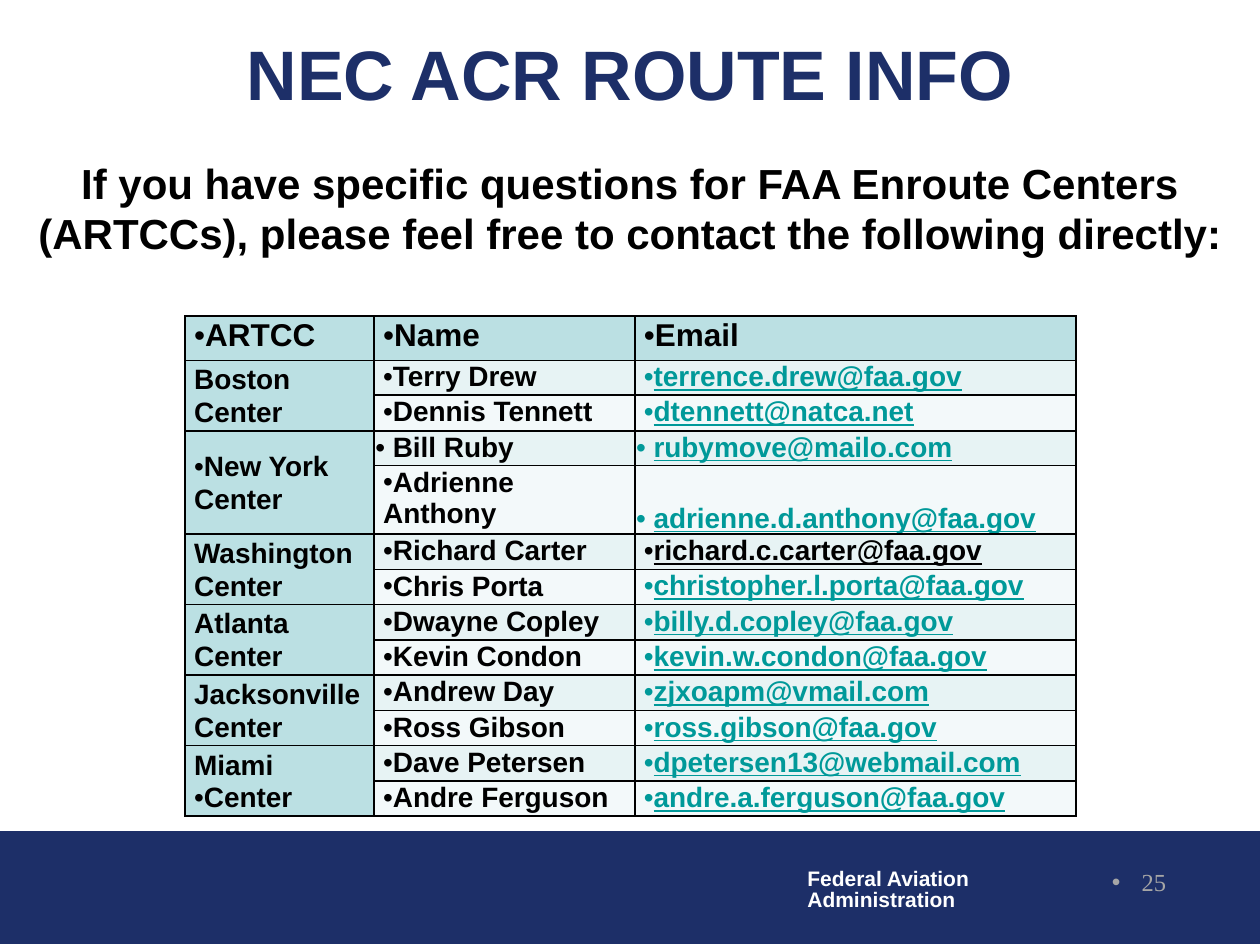
from lxml import etree
from pptx import Presentation
from pptx.dml.color import RGBColor
from pptx.enum.shapes import MSO_SHAPE
from pptx.enum.text import MSO_ANCHOR, PP_ALIGN
from pptx.oxml.ns import qn
from pptx.util import Pt

RECT = MSO_SHAPE.RECTANGLE
TOP, MID, LOW = MSO_ANCHOR.TOP, MSO_ANCHOR.MIDDLE, MSO_ANCHOR.BOTTOM
LEFT, MIDDLE, RIGHT = PP_ALIGN.LEFT, PP_ALIGN.CENTER, PP_ALIGN.RIGHT

COLORS = {
    "navy": "1D2F68", "white": "FFFFFF", "black": "000000", "gray": "A6A6A6",
    "link": "009999", "head": "BBE0E3", "odd": "E7F3F4", "even": "F3F9FA",
}

HEADS = ["ARTCC", "Name", "Email"]
# Center name lines, then its two contacts
CENTERS = [
    (["Boston", "Center"], [("Terry Drew", "terrence.drew@faa.gov"),
                            ("Dennis Tennett", "dtennett@natca.net")]),
    (["•New York", "Center"], [("Bill Ruby", "rubymove@mailo.com"),
                               ("Adrienne Anthony", "adrienne.d.anthony@faa.gov")]),
    (["Washington", "Center"], [("Richard Carter", "richard.c.carter@faa.gov"),
                                ("Chris Porta", "christopher.l.porta@faa.gov")]),
    (["Atlanta", "Center"], [("Dwayne Copley", "billy.d.copley@faa.gov"),
                             ("Kevin Condon", "kevin.w.condon@faa.gov")]),
    (["Jacksonville", "Center"], [("Andrew Day", "zjxoapm@vmail.com"),
                                  ("Ross Gibson", "ross.gibson@faa.gov")]),
    (["Miami", "•Center"], [("Dave Petersen", "dpetersen13@webmail.com"),
                            ("Andre Ferguson", "andre.a.ferguson@faa.gov")]),
]
HUNG = {"Bill Ruby", "rubymove@mailo.com", "adrienne.d.anthony@faa.gov"}
SINGLE = HUNG | {"Terry Drew", "terrence.drew@faa.gov", "Dennis Tennett",
                 "dtennett@natca.net", "Adrienne Anthony",
                 "christopher.l.porta@faa.gov"}
PLAIN = {"richard.c.carter@faa.gov"}
BASE = {"adrienne.d.anthony@faa.gov"}


def rgb(name):
    return RGBColor.from_string(COLORS[name])


def add_bullet(para, hang=0):
    props = para._p.get_or_add_pPr()
    props.set("marL", str(Pt(hang)))
    props.set("indent", str(-Pt(hang)))
    etree.SubElement(props, qn("a:buFont")).set("typeface", "Arial")
    etree.SubElement(props, qn("a:buChar")).set("char", "•")


def write(frame, lines, size, color, align=LEFT, space=None, face="Arial",
          bold=True, line=False, hang=0):
    """Fill a frame; a line that starts with • becomes a bullet."""
    for i, text in enumerate(lines):
        para = frame.paragraphs[0] if i == 0 else frame.add_paragraph()
        if text.startswith("•"):
            add_bullet(para, hang)
        para.add_run().text = text.removeprefix("•")
        para.alignment = align
        if space:
            para.line_spacing = space
        font = para.font
        font.name, font.size, font.bold = face, Pt(size), bold
        font.underline = line
        font.color.rgb = rgb(color)


def add_text(slide, box, lines, size, color, wrap=True, anchor=TOP, **style):
    frame = slide.shapes.add_textbox(*map(Pt, box)).text_frame
    frame.word_wrap = wrap
    frame.vertical_anchor = anchor
    write(frame, lines, size, color, **style)


def add_border(cell):
    props = cell._tc.get_or_add_tcPr()
    for i, side in enumerate(("lnL", "lnR", "lnT", "lnB")):
        edge = etree.Element(qn("a:" + side), w=str(Pt(1)))
        fill = etree.SubElement(edge, qn("a:solidFill"))
        etree.SubElement(fill, qn("a:srgbClr")).set("val", COLORS["black"])
        props.insert(i, edge)


def set_cell(cell, lines, fill, size=16, color="black", anchor=TOP, side=5.2,
             top=0, **style):
    cell.margin_left = cell.margin_right = Pt(side)
    cell.margin_top, cell.margin_bottom = Pt(top), Pt(0)
    cell.vertical_anchor = anchor
    cell.fill.solid()
    cell.fill.fore_color.rgb = rgb(fill)
    add_border(cell)
    write(cell.text_frame, lines, size, color, **style)


def set_entry(cell, text, fill):
    mail, hung = "@" in text, text in HUNG
    set_cell(cell, ["•" + text], fill,
             color="link" if mail and text not in PLAIN else "black",
             anchor=LOW if text in BASE else TOP,
             side=0.7 if hung else 5.2, hang=10 if hung else 0,
             top=0.7 if text in SINGLE else 0,
             space=None if text in SINGLE else 1.05, line=mail)


def add_contacts(slide, box):
    count = 1 + 2 * len(CENTERS)
    table = slide.shapes.add_table(count, 3, *map(Pt, box)).table
    for col, width in zip(table.columns, (108, 149, 252)):
        col.width = Pt(width)
    for row in table.rows:
        row.height = Pt(18.7)
    table.rows[0].height = Pt(25.2)
    table.rows[4].height = Pt(36.4)

    for col, head in enumerate(HEADS):
        set_cell(table.cell(0, col), ["•" + head], "head", size=18, space=1.05)
    for i, (center, people) in enumerate(CENTERS):
        first = 1 + 2 * i
        table.cell(first, 0).merge(table.cell(first + 1, 0))
        set_cell(table.cell(first, 0), center, "head", anchor=MID, space=1.05)
        add_border(table.cell(first + 1, 0))
        for j, person in enumerate(people):
            for col, text in enumerate(person, 1):
                set_entry(table.cell(first + j, col), text, ("odd", "even")[j])


def add_footer(slide, box):
    left, top, width, height = box
    band = slide.shapes.add_shape(RECT, *map(Pt, box))
    band.shadow.inherit = False
    band.fill.solid()
    band.fill.fore_color.rgb = band.line.color.rgb = rgb("navy")
    band.line.width = Pt(0.75)
    add_text(slide, (left + 454.3, top + 18, 108, 32),
             ["Federal Aviation", "Administration"], 12, "white",
             wrap=False, space=0.85)
    add_text(slide, (left + 523.5, top + 16.6, 150, 36), ["•25"], 14, "gray",
             align=RIGHT, face="Times New Roman", bold=False, hang=17)


def main():
    deck = Presentation()
    deck.slide_width, deck.slide_height = Pt(720), Pt(540)
    slide = deck.slides.add_slide(deck.slide_layouts[6])
    add_footer(slide, (0, 475.2, 720, 64))
    # Title and lead text
    add_text(slide, (0, 17.3, 720, 48), ["NEC ACR ROUTE INFO"], 40, "navy",
             anchor=MID, align=MIDDLE)
    add_text(slide, (0, 86.4, 720, 404.6),
             ["If you have specific questions for FAA Enroute Centers (ARTCCs), "
              "please feel free to contact the following directly:"],
             24, "black", align=MIDDLE)
    add_contacts(slide, (105.8, 180.7, 509, 267))
    deck.save("out.pptx")


if __name__ == "__main__":
    main()
